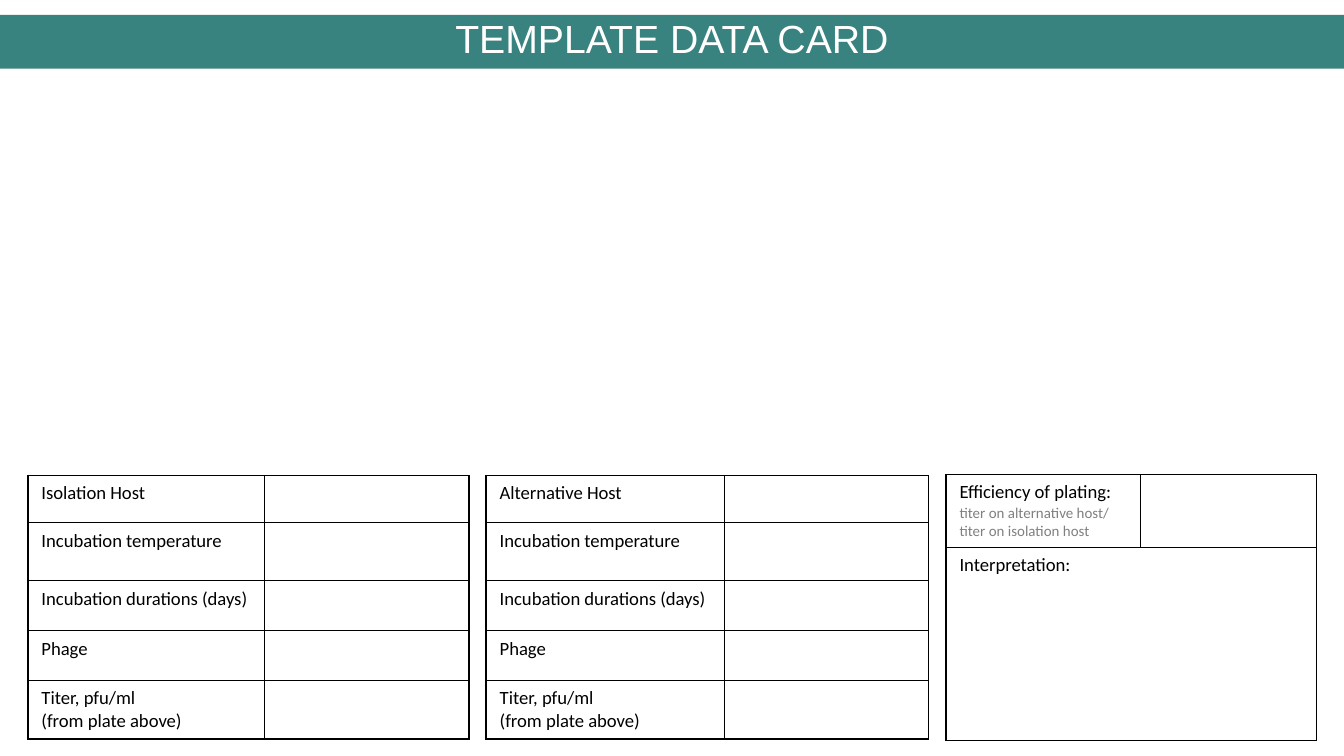
from dataclasses import dataclass
from lxml import etree
from pptx import Presentation
from pptx.dml.color import RGBColor
from pptx.enum import text
from pptx.oxml import ns
from pptx.util import Cm, Pt


@dataclass
class Theme:
    teal: str = "38837F"
    white: str = "FFFFFF"
    black: str = "000000"
    gray: str = "808080"
    head: int = 21
    body: int = 10
    note: int = 8
    thick: float = 1
    thin: float = 0.5


theme = Theme()


def style(para, size, color, face="Calibri"):
    for run in para.runs:
        run.font.size = Pt(size)
        run.font.name = face
        run.font.color.rgb = RGBColor.from_string(color)
    if not para.runs:
        end = etree.SubElement(para._p, ns.qn("a:endParaRPr"))
        end.set("sz", str(size * 100))


def border(cell, sides):
    props = cell._tc.get_or_add_tcPr()
    for side, width in sides.items():
        line = etree.SubElement(props, ns.qn(f"a:ln{side}"), w=str(Pt(width)))
        fill = etree.SubElement(line, ns.qn("a:solidFill"))
        etree.SubElement(fill, ns.qn("a:srgbClr"), val=theme.black)


deck = Presentation()
deck.slide_width, deck.slide_height = Cm(25.4), Cm(14.29)
slide = deck.slides.add_slide(deck.slide_layouts[5])

title = slide.shapes.title
title.left, title.top, title.width, title.height = Cm(0), Cm(0.28), Cm(25.4), Cm(1.02)
title.fill.solid()
title.fill.fore_color.rgb = RGBColor.from_string(theme.teal)
frame = title.text_frame
frame.text = "TEMPLATE DATA CARD"
frame.auto_size = text.MSO_AUTO_SIZE.NONE
frame.vertical_anchor = text.MSO_ANCHOR.MIDDLE
para = frame.paragraphs[0]
para.alignment = text.PP_ALIGN.CENTER
para.line_spacing = 0.8
style(para, theme.head, theme.white, "Arial")

fields = ["Incubation temperature", "Incubation durations (days)", "Phage",
          "Titer, pfu/ml \v(from plate above)"]
steps = [0.89, 1.1, 0.94, 0.94, 1.1]
result = ["Efficiency of plating:\ntiter on alternative host/ titer on isolation host",
          "Interpretation:"]
cards = [
    (0.53, 8.99, [4.47, 3.86], steps, ["Isolation Host"] + fields, theme.thick),
    (9.19, 8.99, [4.5, 3.86], steps, ["Alternative Host"] + fields, theme.thick),
    (17.88, 8.97, [3.68, 3.32], [1.35, 3.65], result, theme.thin),
]

for left, top, cols, rows, labels, foot in cards:
    table = slide.shapes.add_table(len(rows), len(cols), Cm(left), Cm(top),
                                   Cm(sum(cols)), Cm(sum(rows))).table
    table.first_row = table.horz_banding = False
    for col, width in zip(table.columns, cols):
        col.width = Cm(width)
    for row, height in zip(table.rows, rows):
        row.height = Cm(height)
    if labels is result:
        table.cell(1, 0).merge(table.cell(1, 1))
    for r, label in enumerate(labels):
        for c in range(len(cols)):
            cell = table.cell(r, c)
            cell.text_frame.text = "" if c else label
            for n, para in enumerate(cell.text_frame.paragraphs):
                style(para, theme.note if n else theme.body,
                      theme.gray if n else theme.black)
            border(cell, {
                "L": theme.thin if c else theme.thick,
                "R": theme.thick if c or cell.is_merge_origin else theme.thin,
                "T": theme.thin if r else theme.thick,
                "B": foot if r == len(rows) - 1 else theme.thin,
            })
            cell.fill.background()

deck.save("out.pptx")
